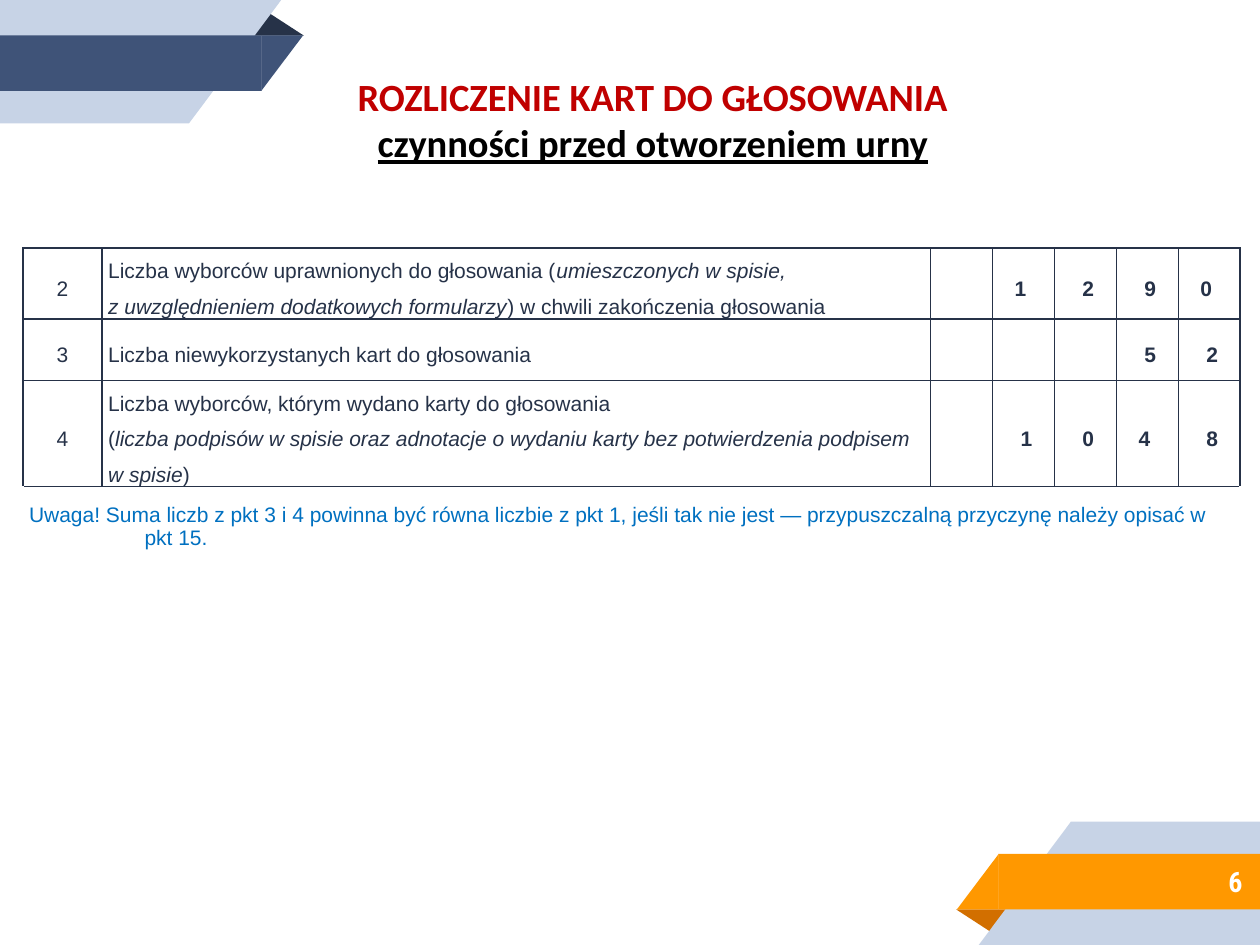
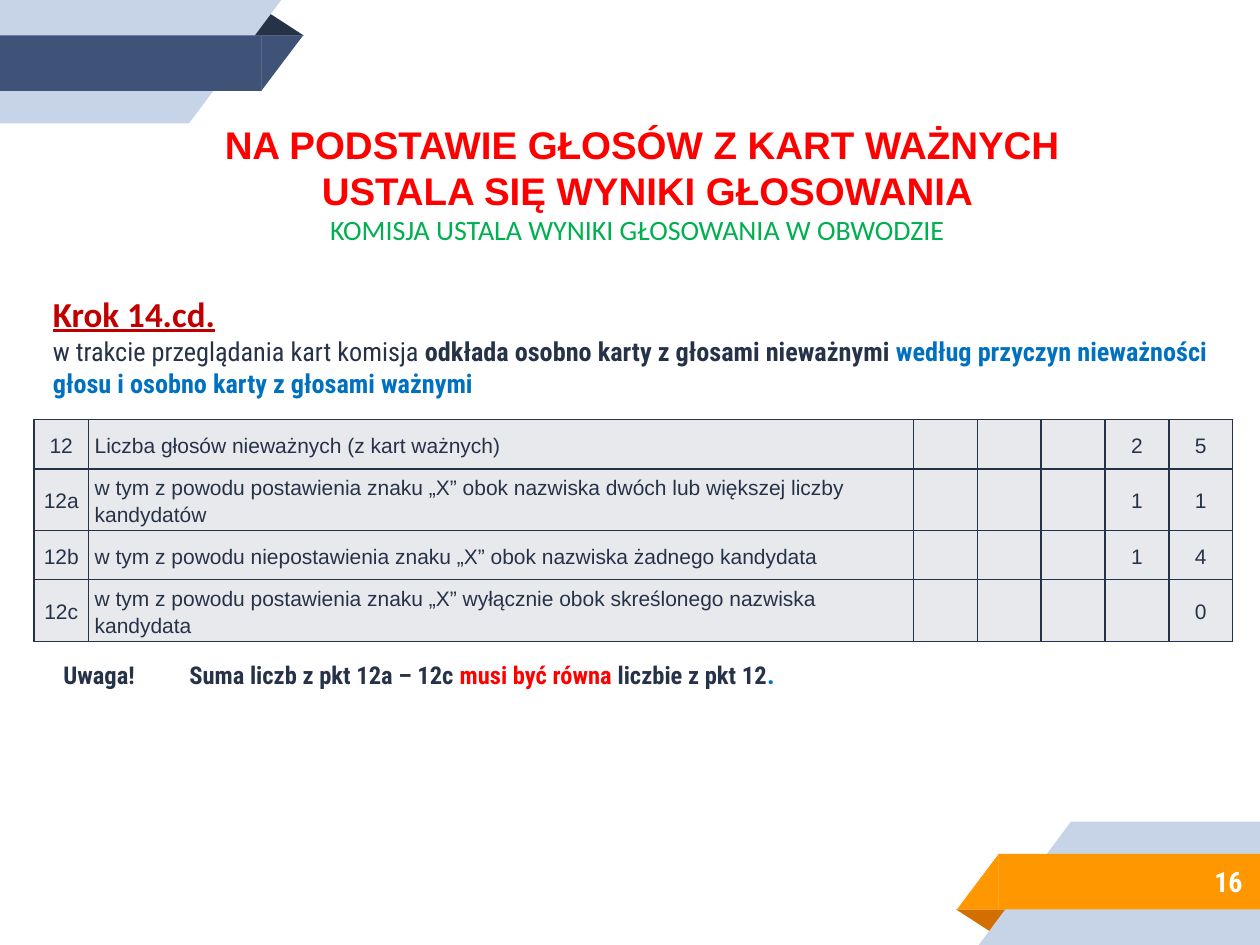
from lxml import etree
from pptx import Presentation
from pptx.dml.color import RGBColor
from pptx.enum import shapes, text
from pptx.oxml import ns
from pptx.util import Pt

COLORS = {
    "ink": "263248", "pale": "C7D3E6", "navy": "3F5378", "orange": "FF9800",
    "rust": "D26F00", "white": "FFFFFF", "black": "000000", "cell": "E8E9EC",
    "blue": "0070C0", "crimson": "C00000", "red": "FF0000", "green": "00B050",
}
WIDTH, HEIGHT = 720, 540
CONDENSED = "Roboto Condensed"
LEFT, CENTER, RIGHT = (text.PP_ALIGN.LEFT, text.PP_ALIGN.CENTER,
                       text.PP_ALIGN.RIGHT)
TOP, MIDDLE = text.MSO_ANCHOR.TOP, text.MSO_ANCHOR.MIDDLE
RECT = shapes.MSO_SHAPE.RECTANGLE
CORNER = shapes.MSO_SHAPE.RIGHT_TRIANGLE
FOLD = shapes.MSO_SHAPE.ISOSCELES_TRIANGLE

# Upper left ribbon: shape, left, top, width, height, part
RIBBON = [
    (FOLD, 142.7, 6.7, 31, 13.7, "fold"),
    (RECT, 0, 0, 108, 70.5, "back"),
    (CORNER, 108, 0, 52.7, 70.5, "back"),
    (RECT, 0, 20.3, 149.5, 31.7, "front"),
    (CORNER, 149.3, 20.3, 23.9, 31.7, "front"),
]


def rgb(name):
    return RGBColor.from_string(COLORS[name])


def add_ribbon(slide, part_colors, turned=False):
    """Draw the corner ribbon, or its half turn in the lower right corner."""
    for kind, left, top, width, height, part in RIBBON:
        if turned:
            left, top = WIDTH - left - width, HEIGHT - top - height
        piece = slide.shapes.add_shape(kind, Pt(left), Pt(top), Pt(width), Pt(height))
        piece.shadow.inherit = False
        piece.fill.solid()
        piece.fill.fore_color.rgb = rgb(part_colors[part])
        piece.line.fill.background()
        if kind == FOLD:
            piece.adjustments[0] = 0.32
            piece.rotation = 180 if turned else 0
        elif kind == CORNER:
            piece._element.spPr.xfrm.set("flipH" if turned else "flipV", "1")


def write(paragraph, runs, align=LEFT, spacing=None, **base):
    """Fill a paragraph with (text, style) runs; a newline is a line break."""
    paragraph.alignment = align
    paragraph.space_before = Pt(0)
    if spacing:
        paragraph.line_spacing = spacing
    for words, changes in runs:
        style = {"font": "Arial", "size": 12, "color": "ink", **base, **changes}
        for index, line in enumerate(words.split("\n")):
            if index:
                paragraph.add_line_break()
            run = paragraph.add_run()
            run.text = line
            run.font.name = style["font"]
            run.font.size = Pt(style["size"])
            run.font.color.rgb = rgb(style["color"])
            run.font.bold = style.get("bold", False)
            run.font.italic = style.get("italic", False)
            run.font.underline = style.get("underline", False)


def set_frame(frame, inset=0, anchor=TOP):
    frame.word_wrap = True
    frame.auto_size = text.MSO_AUTO_SIZE.NONE
    frame.vertical_anchor = anchor
    frame.margin_left = frame.margin_right = Pt(inset)
    frame.margin_top = frame.margin_bottom = Pt(inset)


def add_text(slide, left, top, width, height, anchor=TOP):
    """Add a text box without insets and return its text frame."""
    box = slide.shapes.add_textbox(Pt(left), Pt(top), Pt(width), Pt(height))
    set_frame(box.text_frame, anchor=anchor)
    return box.text_frame


def add_title(slide, left, top, width, height, lines, **base):
    title = slide.shapes.title
    title.left, title.top = Pt(left), Pt(top)
    title.width, title.height = Pt(width), Pt(height)
    frame = title.text_frame
    set_frame(frame)
    for index, line in enumerate(lines):
        paragraph = frame.add_paragraph() if index else frame.paragraphs[0]
        write(paragraph, [line], CENTER, size=22, bold=True, **base)


def set_borders(cell, sides):
    for side in sides:
        line = etree.SubElement(cell._tc.get_or_add_tcPr(), ns.qn("a:ln" + side),
                                w=str(Pt(1)))
        fill = etree.SubElement(line, ns.qn("a:solidFill"))
        etree.SubElement(fill, ns.qn("a:srgbClr"), val=COLORS["ink"])


def format_cell(cell, sides="LRTB", fill=None):
    cell.margin_left = cell.margin_right = Pt(3.6)
    cell.margin_top = cell.margin_bottom = 0
    cell.vertical_anchor = MIDDLE
    set_borders(cell, sides)
    if fill:
        cell.fill.solid()
        cell.fill.fore_color.rgb = rgb(fill)
    else:
        cell.fill.background()


def add_count_table(slide, left, top, columns, heights, rows, spacing,
                    fill=None, bold_digits=False):
    """Add rows of (number, label runs, digits), digits set to the right."""
    table = slide.shapes.add_table(
        len(heights), len(columns), Pt(left), Pt(top),
        Pt(sum(columns)), Pt(sum(heights))).table
    table.first_row = table.horz_banding = False
    for column, width in zip(table.columns, columns):
        column.width = Pt(width)
    for table_row, height in zip(table.rows, heights):
        table_row.height = Pt(height)
    for row, (number, label, digits) in enumerate(rows):
        for column in range(len(columns)):
            format_cell(table.cell(row, column), fill=fill)
        write(table.cell(row, 0).text_frame.paragraphs[0], [(number, {})],
              CENTER, spacing)
        write(table.cell(row, 1).text_frame.paragraphs[0], label, LEFT, spacing)
        first = len(columns) - len(digits)
        for column, digit in enumerate(digits, first):
            if digit:
                write(table.cell(row, column).text_frame.paragraphs[0],
                      [(digit, {})], CENTER, spacing, bold=bold_digits)
    return table


def add_slide(deck, number):
    """Add a title-only slide with both ribbons and its number."""
    slide = deck.slides.add_slide(deck.slide_layouts[5])
    add_ribbon(slide, {"fold": "ink", "back": "pale", "front": "navy"})
    add_ribbon(slide, {"fold": "rust", "back": "pale", "front": "orange"},
               turned=True)
    frame = add_text(slide, 600, 487, 110, 33, MIDDLE)
    write(frame.paragraphs[0], [(number, {})], RIGHT, font=CONDENSED, size=16,
          color="white", bold=True)
    return slide


def build_card_count(deck):
    slide = add_slide(deck, "6")
    add_title(slide, 193, 41.8, 360, 54, [
        ("ROZLICZENIE KART DO GŁOSOWANIA", {"color": "crimson"}),
        ("czynności przed otworzeniem urny", {"color": "black", "underline": True}),
    ], font="Calibri")
    italic = {"italic": True}
    rows = [
        ("2", [("Liczba wyborców uprawnionych do głosowania (", {}),
               ("umieszczonych w spisie, \nz uwzględnieniem dodatkowych formularzy",
                italic),
               (") w chwili zakończenia głosowania", {})],
         ["1 ", " 2", " 9", "0 "]),
        ("3", [("Liczba niewykorzystanych kart do głosowania", {})], [" 5", " 2"]),
        ("4", [("Liczba wyborców, którym wydano karty do głosowania\n(", {}),
               ("liczba podpisów w spisie oraz adnotacje o wydaniu karty "
                "bez potwierdzenia podpisem w spisie", italic), (")", {})],
         [" 1", " 0", "4 ", " 8"]),
    ]
    table = add_count_table(slide, 13, 141.6, [45.2, 473.6] + [35.4] * 5,
                            [40.6, 35.3, 60.6, 52], rows, 1.5, bold_digits=True)
    note_row = len(rows)
    for column in range(7):
        format_cell(table.cell(note_row, column), "T")
    note = table.cell(note_row, 0)
    note.merge(table.cell(note_row, 6))
    note.vertical_anchor = TOP
    note.margin_top = Pt(9.5)
    remark = note.text_frame.paragraphs[0]
    write(remark, [("Uwaga! Suma liczb z pkt 3 i 4 powinna być równa liczbie z pkt 1, "
                    "jeśli tak nie jest — przypuszczalną przyczynę należy opisać w\n"
                    "pkt 15.", {"color": "blue"})])
    properties = remark._p.get_or_add_pPr()
    properties.set("marL", str(Pt(66)))
    properties.set("indent", str(-Pt(66)))


def build_vote_results(deck):
    slide = add_slide(deck, "16")
    add_title(slide, 23, 69.4, 694, 53, [
        ("NA PODSTAWIE GŁOSÓW Z KART WAŻNYCH ", {}),
        ("USTALA SIĘ WYNIKI GŁOSOWANIA", {}),
    ], color="red", spacing=Pt(26.3))
    subtitle = add_text(slide, 188.6, 121.5, 400, 20)
    write(subtitle.paragraphs[0],
          [("KOMISJA USTALA WYNIKI GŁOSOWANIA W OBWODZIE", {})],
          font="Calibri", size=16, color="green")

    step = add_text(slide, 30.2, 167, 680, 62)
    write(step.paragraphs[0], [("Krok 14.cd.", {})], font="Calibri", size=20,
          color="crimson", bold=True, underline=True)
    write(step.add_paragraph(), [
        ("w trakcie przeglądania kart komisja ", {}),
        ("odkłada osobno karty z głosami nieważnymi ", {"bold": True}),
        ("według przyczyn nieważności głosu i osobno karty z głosami ważnymi",
         {"bold": True, "color": "blue"}),
    ], spacing=Pt(18.4), font=CONDENSED, size=15)

    reason = "w tym z powodu "
    rows = [
        ("12", [("Liczba głosów nieważnych (z kart ważnych)", {})], "25"),
        ("12a", [(reason + "postawienia znaku „X” obok nazwiska dwóch lub "
                  "większej liczby kandydatów", {})], "11"),
        ("12b", [(reason + "niepostawienia znaku „X” obok nazwiska żadnego "
                  "kandydata", {})], "14"),
        ("12c", [(reason + "postawienia znaku „X” wyłącznie obok skreślonego "
                  "nazwiska kandydata", {})], "0"),
    ]
    add_count_table(slide, 19.5, 239.8, [31, 471.5] + [36.5] * 5,
                    [28.1, 35.3] * 2, rows, 1.15, fill="cell")

    remark = add_text(slide, 36.2, 376, 640, 20)
    write(remark.paragraphs[0], [
        ("Uwaga!\tSuma liczb z pkt 12a – 12c ", {}),
        ("musi być równa", {"color": "red"}),
        (" liczbie z pkt 12", {}),
        (".", {"size": 15, "color": "blue"}),
    ], font=CONDENSED, size=14, bold=True)


def main():
    deck = Presentation()
    deck.slide_width, deck.slide_height = Pt(WIDTH), Pt(HEIGHT)
    build_card_count(deck)
    build_vote_results(deck)
    deck.save("out.pptx")


if __name__ == "__main__":
    main()
